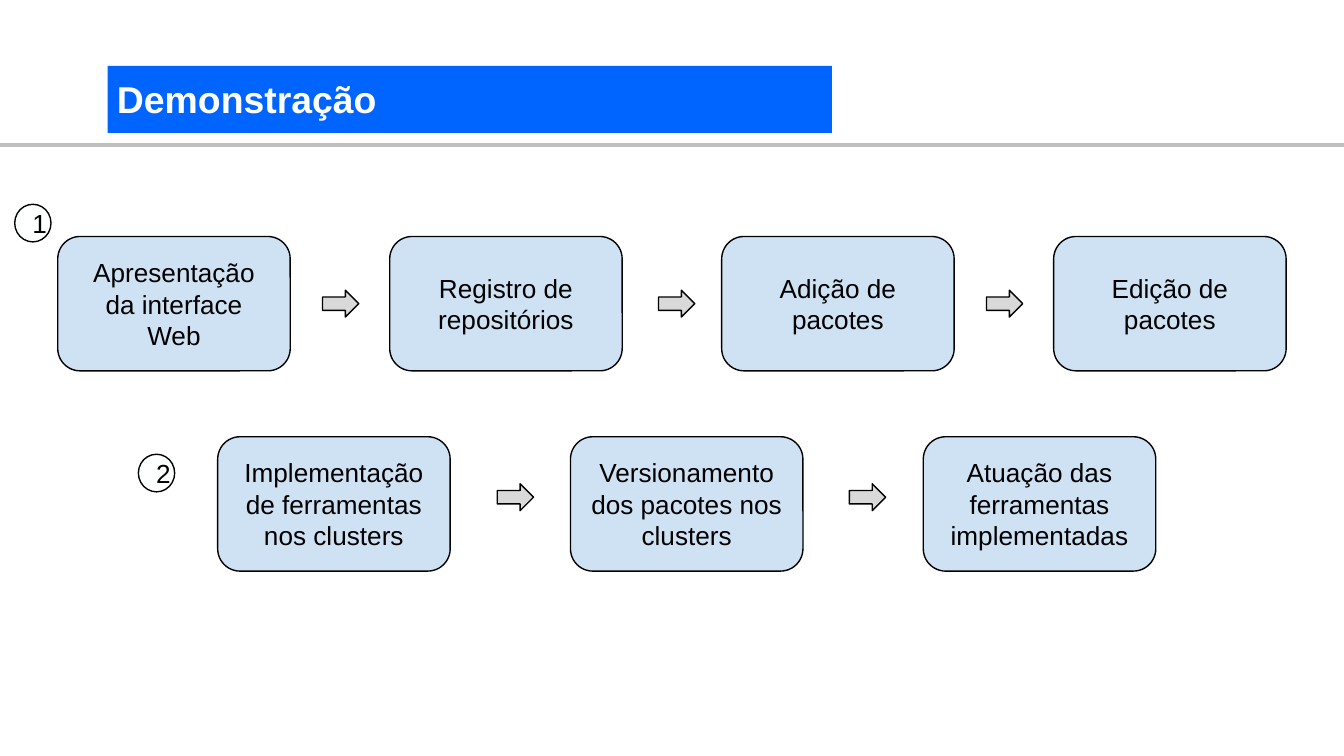
import dataclasses

import pptx
import pptx.dml.color
import pptx.enum.shapes
import pptx.enum.text
import pptx.util
from lxml import etree

SHAPE = pptx.enum.shapes.MSO_SHAPE
ALIGN = pptx.enum.text.PP_ALIGN
ANCHOR = pptx.enum.text.MSO_ANCHOR
RGBColor = pptx.dml.color.RGBColor

BLUE = RGBColor(0x00, 0x64, 0xFF)
PALE_BLUE = RGBColor(0xCF, 0xE2, 0xF3)
GRAY = RGBColor(0xD9, 0xD9, 0xD9)
RULE_GRAY = RGBColor(0xBF, 0xBF, 0xBF)
WHITE = RGBColor(0xFE, 0xFF, 0xFF)
BLACK = RGBColor(0, 0, 0)
FONT = "Arial"

# Square grid: 100 columns by 56.25 rows
WIDTH, HEIGHT = pptx.util.Inches(10), pptx.util.Inches(5.625)
CELL = WIDTH / 100
STEP_W, STEP_H = 17.3, 10
ARROW_W, ARROW_H = 2.7, 2
BADGE_W, BADGE_H = 2.7, 2.8


@dataclasses.dataclass(frozen=True)
class Area:
    col: float
    row: float
    cols: float
    rows: float

    def box(self) -> list[int]:
        return [round(n * CELL) for n in (self.col, self.row, self.cols, self.rows)]


@dataclasses.dataclass(frozen=True)
class Flow:
    number: str
    badge_col: float
    badge_row: float
    first_col: float
    pitch: float
    row: float
    arrow_row: float
    arrow_cols: tuple[float, ...]
    steps: tuple[str, ...]


FLOWS = (
    Flow("1", 1.1, 15.2, 4.3, 24.7, 17.6, 21.6, (24, 49, 73.4),
         ("Apresentação da interface Web", "Registro de repositórios",
          "Adição de pacotes", "Edição de pacotes")),
    Flow("2", 10.3, 33.8, 16.2, 26.25, 32.5, 36, (37, 63.2),
         ("Implementação de ferramentas nos clusters",
          "Versionamento dos pacotes nos clusters",
          "Atuação das ferramentas implementadas")),
)


def add_filled(slide, kind, area: Area, fill: RGBColor, outlined: bool = True):
    shape = slide.shapes.add_shape(kind, *area.box())
    shape.shadow.inherit = False
    shape.fill.solid()
    shape.fill.fore_color.rgb = fill
    if outlined:
        shape.line.color.rgb = BLACK
        shape.line.width = pptx.util.Pt(0.75)
    else:
        shape.line.fill.background()
    return shape


def write(shape, text: str, align, anchor, size: float, color: RGBColor,
          inset_x: float = 0.1, inset_y: float = 0.1, bold: bool = False) -> None:
    frame = shape.text_frame
    frame.word_wrap = True
    frame.vertical_anchor = anchor
    frame.margin_left = frame.margin_right = pptx.util.Inches(inset_x)
    frame.margin_top = frame.margin_bottom = pptx.util.Inches(inset_y)
    paragraph = frame.paragraphs[0]
    paragraph.alignment = align
    run = paragraph.add_run()
    run.text = text
    run.font.name = FONT
    run.font.size = pptx.util.Pt(size)
    run.font.bold = bold
    run.font.color.rgb = color


def add_heading(slide) -> None:
    # Rule across the slide
    rule_y = round(10.8 * CELL)
    rule = slide.shapes.add_connector(
        pptx.enum.shapes.MSO_CONNECTOR.STRAIGHT, 0, rule_y, WIDTH, rule_y)
    rule.line.color.rgb = RULE_GRAY
    rule.line.width = pptx.util.Pt(2.25)
    properties = rule.element.spPr
    etree.SubElement(properties, pptx.oxml.ns.qn("a:effectLst"))

    # Banner behind the title
    banner = add_filled(slide, SHAPE.RECTANGLE, Area(8, 4.9, 53.9, 5), BLUE, False)
    title = slide.shapes.title
    title.element.addprevious(rule.element)
    title.element.addprevious(banner.element)
    title.left, title.top, title.width, title.height = Area(8, 5.3, 52.4, 4.1).box()
    write(title, "Demonstração", ALIGN.LEFT, ANCHOR.TOP, 20, WHITE, 0.07, 0.04, True)
    title.text_frame.auto_size = pptx.enum.text.MSO_AUTO_SIZE.SHAPE_TO_FIT_TEXT


def add_flow(slide, flow: Flow) -> None:
    # Steps
    for index, label in enumerate(flow.steps):
        area = Area(flow.first_col + index * flow.pitch, flow.row, STEP_W, STEP_H)
        step = add_filled(slide, SHAPE.ROUNDED_RECTANGLE, area, PALE_BLUE)
        write(step, label, ALIGN.CENTER, ANCHOR.MIDDLE, 14, BLACK)
    # Arrows between steps
    for col in flow.arrow_cols:
        add_filled(slide, SHAPE.RIGHT_ARROW,
                   Area(col, flow.arrow_row, ARROW_W, ARROW_H), GRAY)
    # Number badge
    badge = add_filled(slide, SHAPE.OVAL,
                       Area(flow.badge_col, flow.badge_row, BADGE_W, BADGE_H), WHITE)
    write(badge, flow.number, ALIGN.JUSTIFY, ANCHOR.MIDDLE, 14, BLACK)


def main() -> None:
    deck = pptx.Presentation()
    deck.slide_width, deck.slide_height = WIDTH, HEIGHT
    slide = deck.slides.add_slide(deck.slide_layouts[5])
    add_heading(slide)
    for flow in FLOWS:
        add_flow(slide, flow)
    deck.save("out.pptx")


if __name__ == "__main__":
    main()
